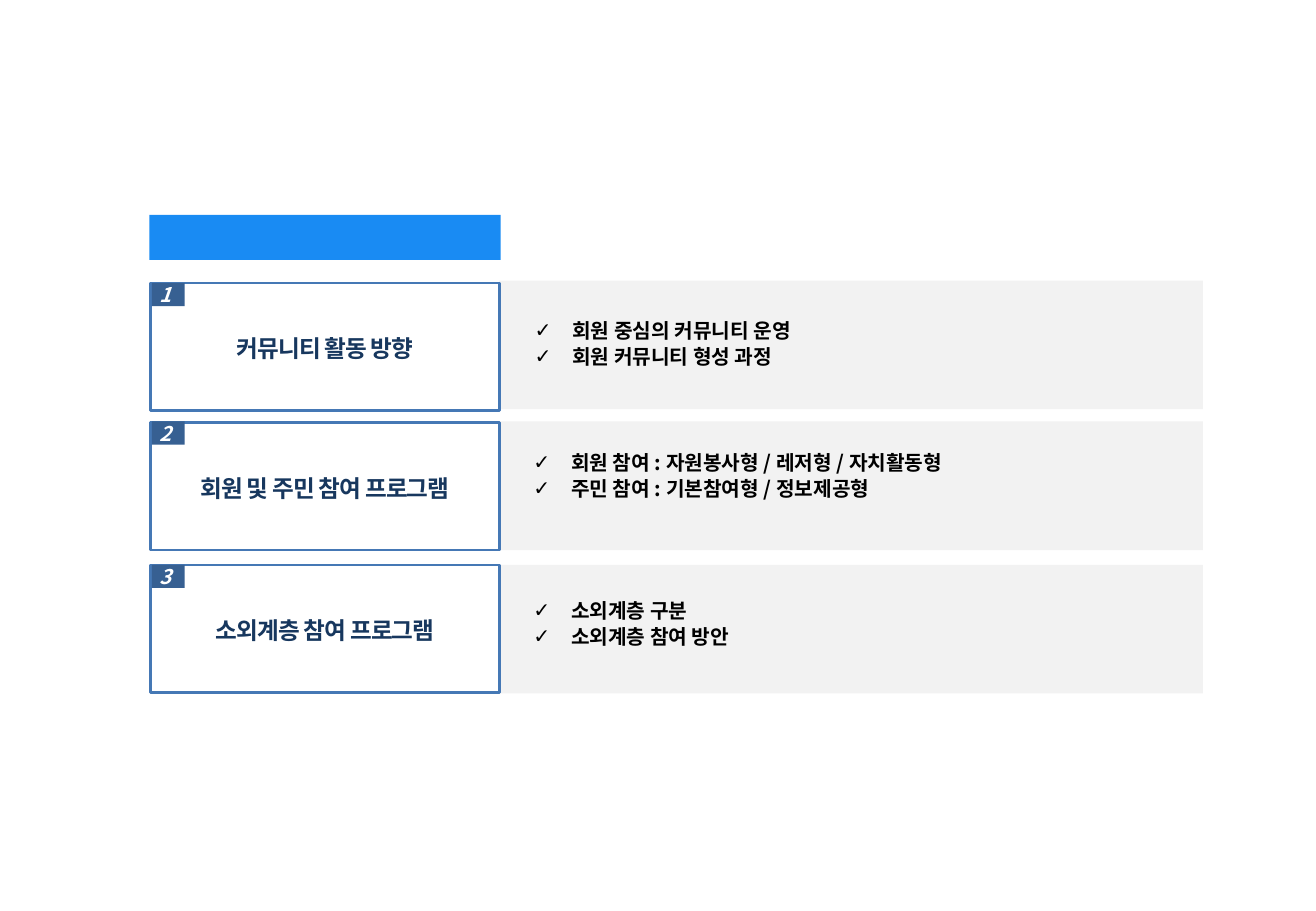
from dataclasses import dataclass

from lxml.etree import SubElement
from pptx import Presentation
from pptx.dml.color import RGBColor
from pptx.enum.shapes import MSO_SHAPE as Shape
from pptx.enum.text import MSO_ANCHOR as Anchor, MSO_AUTO_SIZE as AutoSize, PP_ALIGN as Align
from pptx.oxml.ns import qn
from pptx.util import Pt

PX = 9144
FONT = "Noto Sans CJK KR"


@dataclass(frozen=True)
class Program:
    band_top: int
    title_top: int
    badge_top: int
    list_left: int
    list_top: int
    title: str
    items: tuple[str, ...]


PROGRAMS = (
    Program(231, 233, 233, 430, 260, "커뮤니티 활동 방향",
            ("회원 중심의 커뮤니티 운영", "회원 커뮤니티 형성 과정")),
    Program(347, 348, 347, 429, 369, "회원 및 주민 참여 프로그램",
            ("회원 참여 : 자원봉사형 / 레저형 / 자치활동형", "주민 참여 : 기본참여형 / 정보제공형")),
    Program(465, 465, 465, 429, 491, "소외계층 참여 프로그램",
            ("소외계층 구분", "소외계층 참여 방안")),
)


def color(value: str) -> RGBColor:
    return RGBColor.from_string(value)


def add_box(slide, left: int, top: int, width: int, height: int, fill: str, line: str | None = None):
    box = slide.shapes.add_shape(Shape.RECTANGLE, left * PX, top * PX, width * PX, height * PX)
    box.shadow.inherit = False
    box.fill.solid()
    box.fill.fore_color.rgb = color(fill)
    if line:
        box.line.color.rgb = color(line)
        box.line.width = Pt(1.5)
    else:
        box.line.fill.background()
    return box


def write(para, text: str, *, size: int, ink: str, align=Align.LEFT, italic: bool = False,
          tracking: int = 0, line_spacing: float = 1.0, after: int = 0) -> None:
    para.alignment = align
    para.line_spacing = line_spacing
    para.space_before = Pt(0)
    para.space_after = Pt(after)
    span = para.add_run()
    span.text = text
    span.font.name = FONT
    span.font.size = Pt(size)
    span.font.bold = True
    span.font.italic = italic
    span.font.color.rgb = color(ink)
    properties = span.font._element
    SubElement(properties, qn("a:ea")).set("typeface", FONT)
    if tracking:
        properties.set("spc", str(tracking))


def add_bullet(para) -> None:
    properties = para._p.get_or_add_pPr()
    properties.set("marL", str(31 * PX))
    properties.set("indent", str(-31 * PX))
    SubElement(properties, qn("a:buChar")).set("char", "✓")


def fill_list(box, program: Program) -> None:
    box.left, box.top = program.list_left * PX, program.list_top * PX
    box.width, box.height = 570 * PX, 55 * PX
    frame = box.text_frame
    frame.word_wrap = True
    frame.auto_size = AutoSize.SHAPE_TO_FIT_TEXT
    frame.vertical_anchor = Anchor.TOP
    for index, item in enumerate(program.items):
        para = frame.add_paragraph() if index else frame.paragraphs[0]
        write(para, item, size=12, ink="000000", line_spacing=0.85, after=3)
        add_bullet(para)
    box._element.getparent().append(box._element)


def add_program(slide, number: int, program: Program, list_box) -> None:
    add_box(slide, 411, program.band_top, 579, 106, "F2F2F2")
    title_box = add_box(slide, 124, program.title_top, 287, 105, "FFFFFF", "4578B5")
    title_box.text_frame.vertical_anchor = Anchor.MIDDLE
    write(title_box.text_frame.paragraphs[0], program.title, size=14, ink="17375E",
          align=Align.CENTER, tracking=-50, line_spacing=1.1)
    badge = add_box(slide, 125, program.badge_top, 27, 19, "376092")
    frame = badge.text_frame
    frame.word_wrap = False
    frame.vertical_anchor = Anchor.MIDDLE
    frame.margin_left, frame.margin_right = 0, 4 * PX
    frame.margin_top = frame.margin_bottom = 5 * PX
    write(frame.paragraphs[0], str(number), size=12, ink="FFFFFF",
          align=Align.CENTER, italic=True, tracking=-100)
    fill_list(list_box, program)


def main() -> None:
    deck = Presentation()
    deck.slide_width, deck.slide_height = 1083 * PX, 750 * PX
    page = deck.slides.add_slide(deck.slide_layouts.get_by_name("Comparison"))
    title, *bodies = list(page.placeholders)
    add_box(page, 123, 177, 289, 37, "198BF3")
    for number, (program, body) in enumerate(zip(PROGRAMS, bodies), start=1):
        add_program(page, number, program, body)
    for unused in (title, *bodies[len(PROGRAMS):]):
        unused._element.getparent().remove(unused._element)
    deck.save("out.pptx")


if __name__ == "__main__":
    main()
